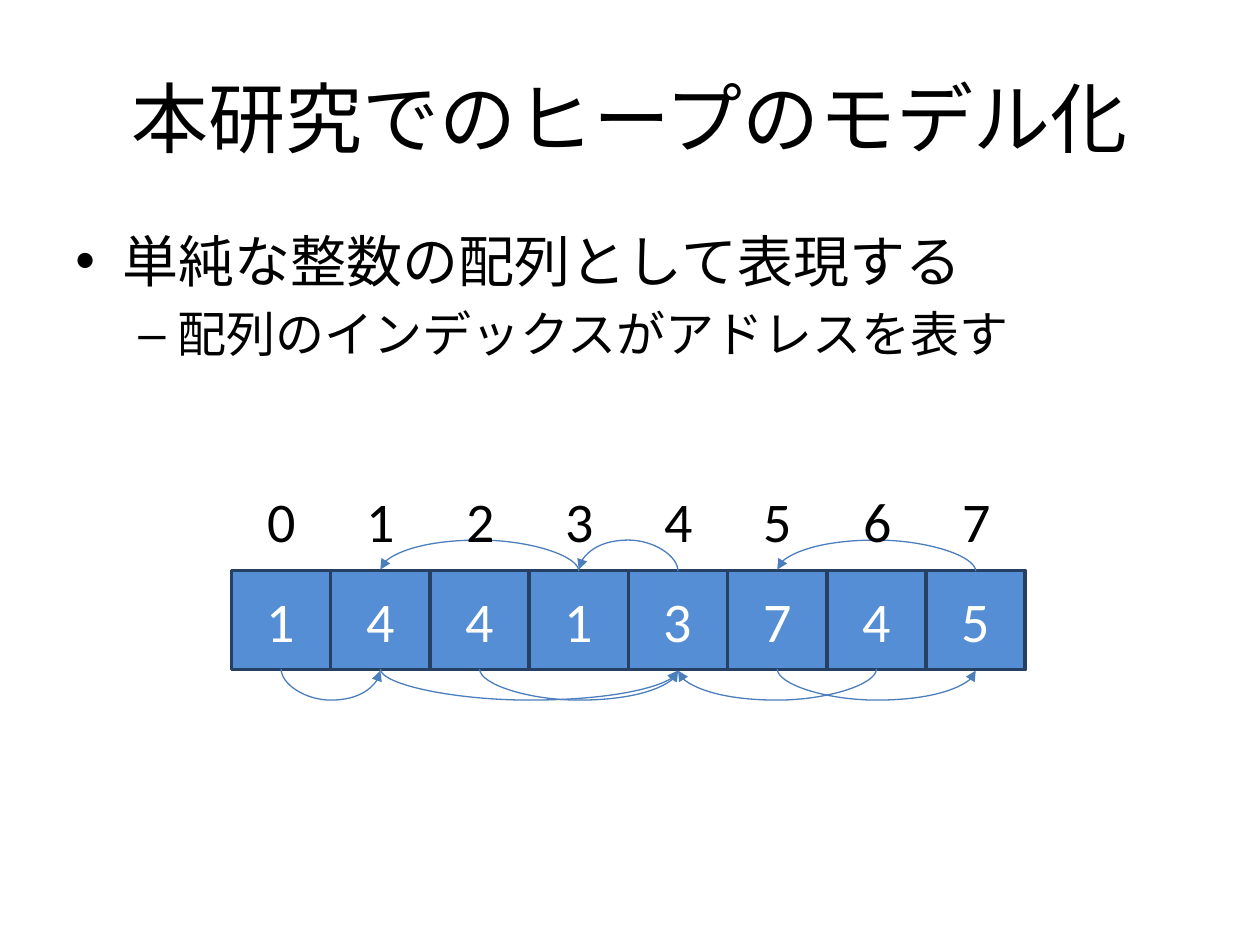
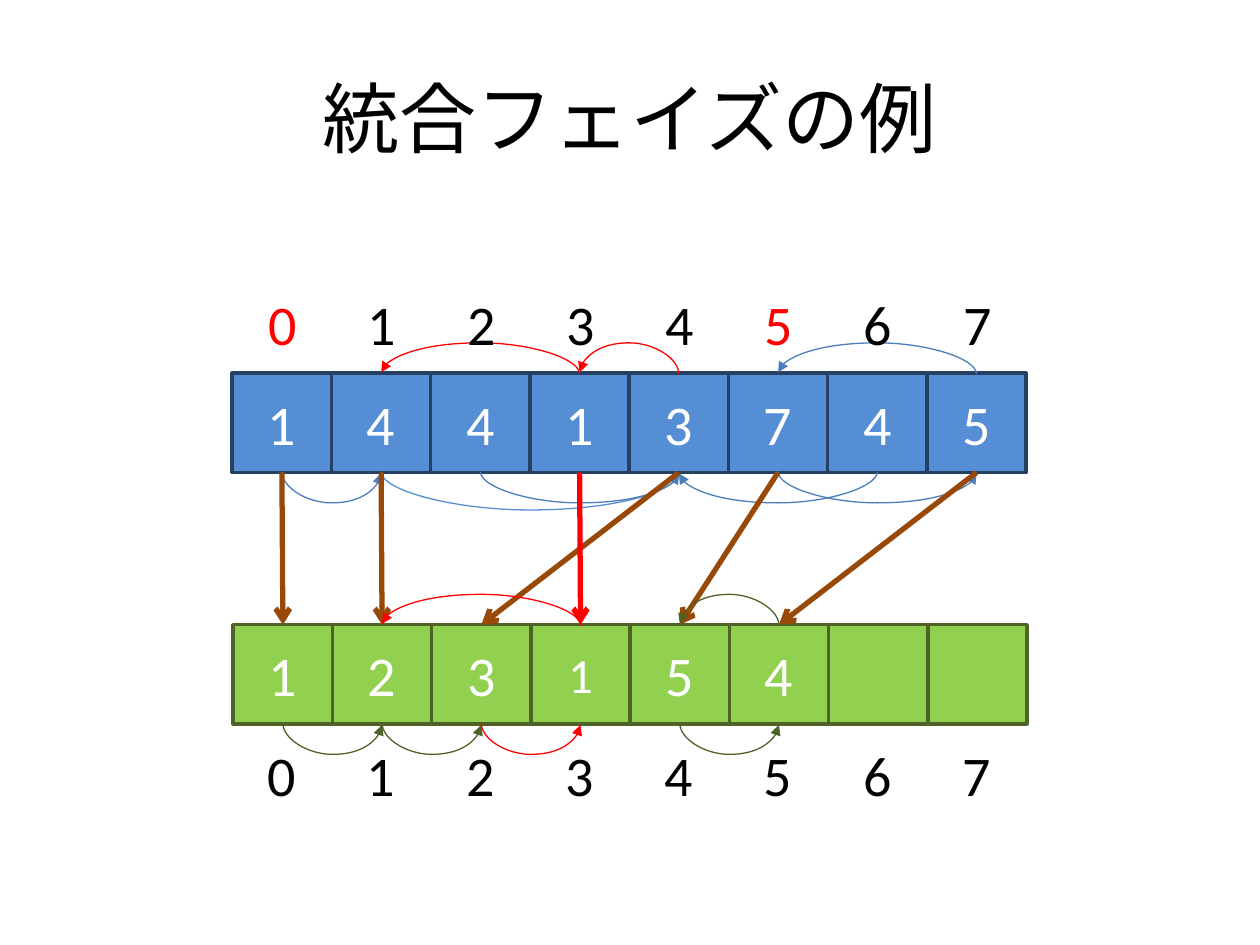
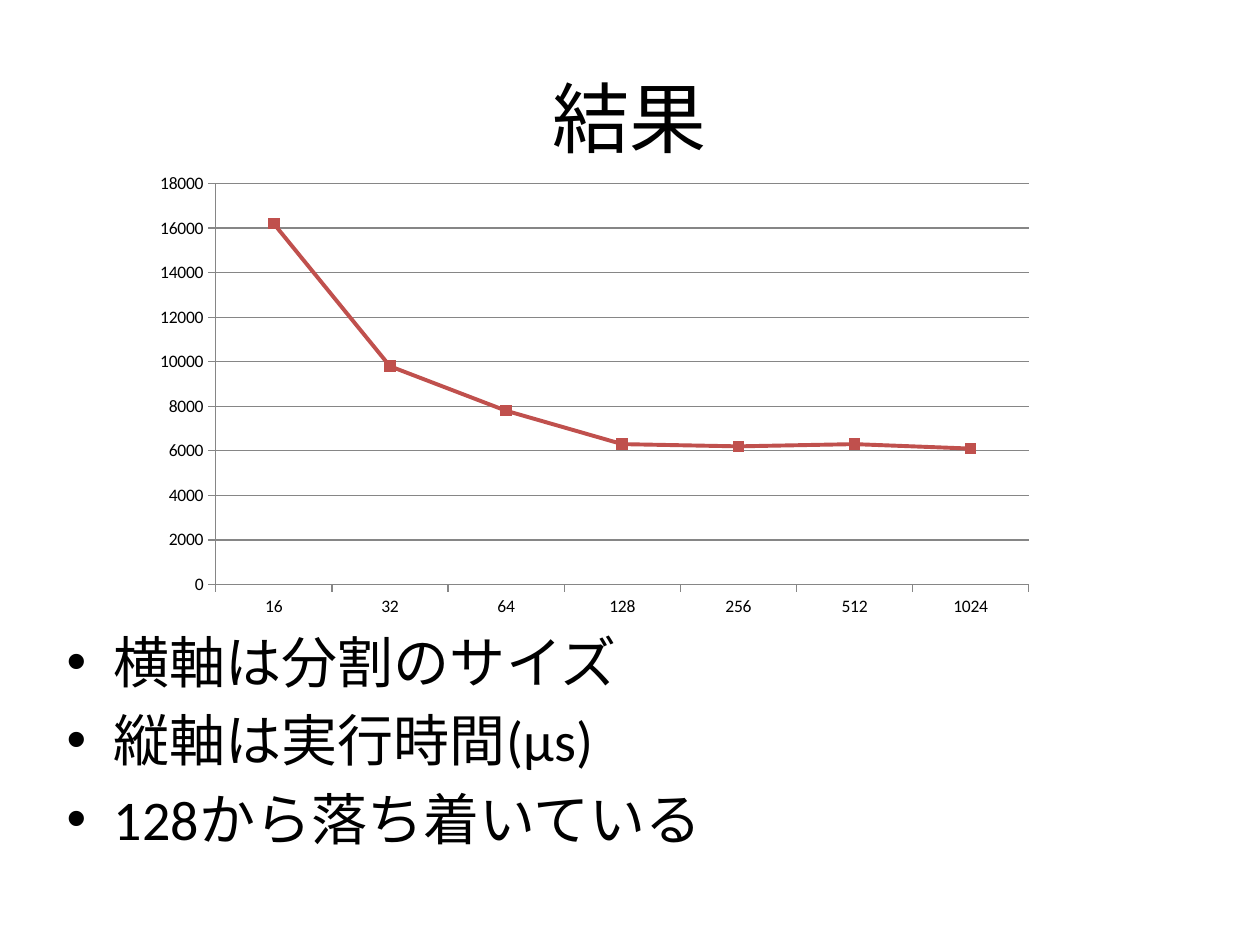
from lxml.etree import SubElement
from pptx import Presentation
from pptx.chart.data import CategoryChartData
from pptx.dml.color import RGBColor
from pptx.enum.chart import XL_CHART_TYPE, XL_MARKER_STYLE, XL_TICK_MARK
from pptx.enum.lang import MSO_LANGUAGE_ID
from pptx.enum.shapes import MSO_CONNECTOR, MSO_SHAPE
from pptx.enum.text import MSO_ANCHOR, PP_ALIGN
from pptx.oxml.ns import qn
from pptx.util import Pt

COLORS = {
    "text": "000000", "cell_text": "FFFFFF",
    "blue": "558ED5", "blue_edge": "254061", "pointer": "4B7EBC",
    "green": "92D050", "green_edge": "4F6228",
    "red": "FF0000", "copy": "984807",
    "series": "C0504D", "grid": "868686",
}
FONT = "Calibri"
CELL = 56.7  # side of one heap cell
TOP, BOTTOM = 0, 2  # connection sites of a rectangle
# bullet, text size, left margin, hanging indent for each level
LEVELS = [("•", 32, 27, 27), ("–", 28, 58.5, 22.5)]
INDICES = "01234567"


def rgb(name):
    return RGBColor.from_string(COLORS[name])


def write_text(para, text, size=32, color="text", align=PP_ALIGN.CENTER,
               language=None):
    para.alignment = align
    span = para.add_run()
    span.text = text
    span.font.name = FONT
    span.font.size = Pt(size)
    span.font.color.rgb = rgb(color)
    if language:
        span.font.language_id = language


class SlideBuilder:
    """Holds the deck, its style and the current page."""

    def __init__(self):
        self.deck = Presentation()
        self.deck.slide_width = Pt(720)
        self.deck.slide_height = Pt(540)
        self.page = None

    def new_page(self, title):
        self.page = self.deck.slides.add_slide(self.deck.slide_layouts[6])
        frame = self.text_frame(36, 21.6, 648, 90, MSO_ANCHOR.MIDDLE)
        write_text(frame.paragraphs[0], title, size=44,
                   language=MSO_LANGUAGE_ID.JAPANESE)

    def text_frame(self, left, top, width, height, anchor):
        box = self.page.shapes.add_textbox(Pt(left), Pt(top), Pt(width), Pt(height))
        box.text_frame.word_wrap = True
        box.text_frame.vertical_anchor = anchor
        return box.text_frame

    def bullets(self, left, top, height, items):
        frame = self.text_frame(left, top, 648, height, MSO_ANCHOR.TOP)
        for number, (level, text) in enumerate(items):
            para = frame.add_paragraph() if number else frame.paragraphs[0]
            bullet, size, margin, hanging = LEVELS[level]
            para.level = level
            para.space_before = Pt(size * 0.2)
            write_text(para, text, size=size, align=PP_ALIGN.LEFT,
                       language=MSO_LANGUAGE_ID.JAPANESE)
            props = para._p.get_or_add_pPr()
            props.set("marL", str(Pt(margin)))
            props.set("indent", str(-Pt(hanging)))
            SubElement(props, qn("a:buFont"), typeface="Arial")
            SubElement(props, qn("a:buChar"), char=bullet)

    def heap(self, left, top, values, fill, sizes=None):
        """Draw a row of cells; None leaves a cell empty."""
        cells = []
        for index, value in enumerate(values):
            cell = self.page.shapes.add_shape(
                MSO_SHAPE.RECTANGLE, Pt(left + index * CELL), Pt(top),
                Pt(CELL), Pt(CELL))
            cell.shadow.inherit = False
            cell.fill.solid()
            cell.fill.fore_color.rgb = rgb(fill)
            cell.line.color.rgb = rgb(fill + "_edge")
            cell.line.width = Pt(2)
            cell.text_frame.vertical_anchor = MSO_ANCHOR.MIDDLE
            if value is not None:
                write_text(cell.text_frame.paragraphs[0], str(value),
                           size=(sizes or {}).get(index, 32), color="cell_text")
            cells.append(cell)
        return cells

    def index_labels(self, left, top, marked=()):
        for index, label in enumerate(INDICES):
            frame = self.text_frame(left + index * CELL, top, CELL, CELL,
                                    MSO_ANCHOR.MIDDLE)
            write_text(frame.paragraphs[0], label,
                       color="red" if index in marked else "text")

    def connect(self, kind, start, start_site, end, end_site, color, width, head):
        line = self.page.shapes.add_connector(kind, 0, 0, 0, 0)
        line.begin_connect(start, start_site)
        line.end_connect(end, end_site)
        line.line.color.rgb = rgb(color)
        line.line.width = Pt(width)
        props = line._element.spPr
        SubElement(props.find(qn("a:ln")), qn("a:tailEnd"), type=head)
        SubElement(props, qn("a:effectLst"))
        return line

    def arrow(self, start, end, color="copy"):
        self.connect(MSO_CONNECTOR.STRAIGHT, start, BOTTOM, end, TOP, color, 3, "arrow")

    def pointer(self, start, end, site, color="pointer", depth=18):
        """Draw a U-shaped curve between the same side of two cells."""
        line = self.connect(MSO_CONNECTOR.CURVE, start, site, end, site,
                            color, 0.75, "triangle")
        # The curve is a box 1 pt wide, turned by a quarter
        span = abs(end.left - start.left)
        middle = (start.left + end.left + start.width) // 2
        edge = start.top + (start.height if site == BOTTOM else 0)
        line.left, line.top = middle - Pt(0.5), edge - span // 2
        line.width, line.height = Pt(1), span
        props = line._element.spPr
        frame = props.find(qn("a:xfrm"))
        rightward = end.left > start.left
        turn = 270 if rightward or site == TOP else 90
        frame.set("rot", str(turn * 60000))
        frame.set("flipH", str(int(rightward)))
        frame.set("flipV", str(int(site == TOP)))
        guides = props.find(qn("a:prstGeom")).get_or_add_avLst()
        SubElement(guides, qn("a:gd"), name="adj1", fmla=f"val {round(depth * 100000)}")

    def line_chart(self, left, top, width, height, categories, values, layout):
        data = CategoryChartData()
        data.categories = categories
        data.add_series("Series 1", values)
        chart = self.page.shapes.add_chart(
            XL_CHART_TYPE.LINE_MARKERS, Pt(left), Pt(top), Pt(width), Pt(height),
            data).chart
        chart.has_legend = False
        chart.has_title = False
        chart.font.name = FONT
        chart.font.size = Pt(10)
        chart.font.color.rgb = rgb("text")
        # Axes
        scale = chart.value_axis
        scale.minimum_scale, scale.maximum_scale, scale.major_unit = 0, 18000, 2000
        scale.has_major_gridlines = True
        for axis in (chart.category_axis, scale):
            axis.major_tick_mark = XL_TICK_MARK.OUTSIDE
        for item in (chart.category_axis, scale, scale.major_gridlines):
            item.format.line.color.rgb = rgb("grid")
            item.format.line.width = Pt(0.75)
        # Series
        chart.plots[0].vary_by_categories = False
        series = chart.plots[0].series[0]
        series.smooth = False
        series.format.line.color.rgb = rgb("series")
        series.format.line.width = Pt(2.25)
        series.marker.style = XL_MARKER_STYLE.SQUARE
        series.marker.size = 6
        series.marker.format.fill.solid()
        series.marker.format.fill.fore_color.rgb = rgb("series")
        series.marker.format.line.color.rgb = rgb("series")
        # Inner plot position
        area = chart._chartSpace.find(".//" + qn("c:plotArea"))
        for old in area.findall(qn("c:layout")):
            area.remove(old)
        holder = SubElement(area, qn("c:layout"))
        area.insert(0, holder)
        manual = SubElement(holder, qn("c:manualLayout"))
        settings = [("layoutTarget", "inner"), ("xMode", "edge"), ("yMode", "edge")]
        settings += zip("xywh", layout)
        for name, value in settings:
            SubElement(manual, qn("c:" + name), val=str(value))


HEAP_VALUES = [1, 4, 4, 1, 3, 7, 4, 5]


def heap_pointers(builder, cells, styles=None):
    """Link each cell to the cell it names: forward below, backward above."""
    for index, target in enumerate(HEAP_VALUES):
        # Cell 6 points backward, but below the row
        site = BOTTOM if target > index or index == 6 else TOP
        builder.pointer(cells[index], cells[target], site,
                        **(styles or {}).get(index, {}))


def model_page(builder):
    builder.new_page("本研究でのヒープのモデル化")
    builder.bullets(36, 126, 178, [
        (0, "単純な整数の配列として表現する"),
        (1, "配列のインデックスがアドレスを表す"),
    ])
    cells = builder.heap(132.3, 326, HEAP_VALUES, "blue")
    heap_pointers(builder, cells)
    builder.index_labels(132.75, 268.8)


def merge_page(builder):
    builder.new_page("統合フェイズの例")
    # Heap before merging
    before = builder.heap(132.75, 213.3, HEAP_VALUES, "blue")
    heap_pointers(builder, before, {
        1: {"color": "blue", "depth": 22.11},
        3: {"color": "red"},
        4: {"color": "red"},
    })
    builder.index_labels(133.3, 156.3, marked=(0, 5))
    # Heap after merging
    after = builder.heap(133.3, 357, [1, 2, 3, 1, 5, 4, None, None], "green",
                         sizes={3: 28})
    builder.index_labels(132.75, 414)
    # Moved cells
    for source, target in [(0, 0), (5, 4), (7, 5), (1, 1), (4, 2)]:
        builder.arrow(before[source], after[target])
    builder.arrow(before[3], after[3], color="red")
    # Updated pointers
    for source, target, site, color in [
        (0, 1, BOTTOM, "green_edge"), (4, 5, BOTTOM, "green_edge"),
        (5, 4, TOP, "green_edge"), (1, 2, BOTTOM, "green_edge"),
        (2, 3, BOTTOM, "red"), (3, 1, TOP, "red"),
    ]:
        builder.pointer(after[source], after[target], site, color=color)


def result_page(builder):
    builder.new_page("結果")
    builder.bullets(31, 355, 164, [
        (0, "横軸は分割のサイズ"),
        (0, "縦軸は実行時間(μs)"),
        (0, "128から落ち着いている"),
    ])
    builder.line_chart(
        82, 94.3, 516.2, 266.4,
        ["16", "32", "64", "128", "256", "512", "1024"],
        [16200, 9800, 7800, 6300, 6200, 6300, 6100],
        layout=(0.08, 0.04, 0.9, 0.86))


def main():
    builder = SlideBuilder()
    model_page(builder)
    merge_page(builder)
    result_page(builder)
    builder.deck.save("out.pptx")


if __name__ == "__main__":
    main()
